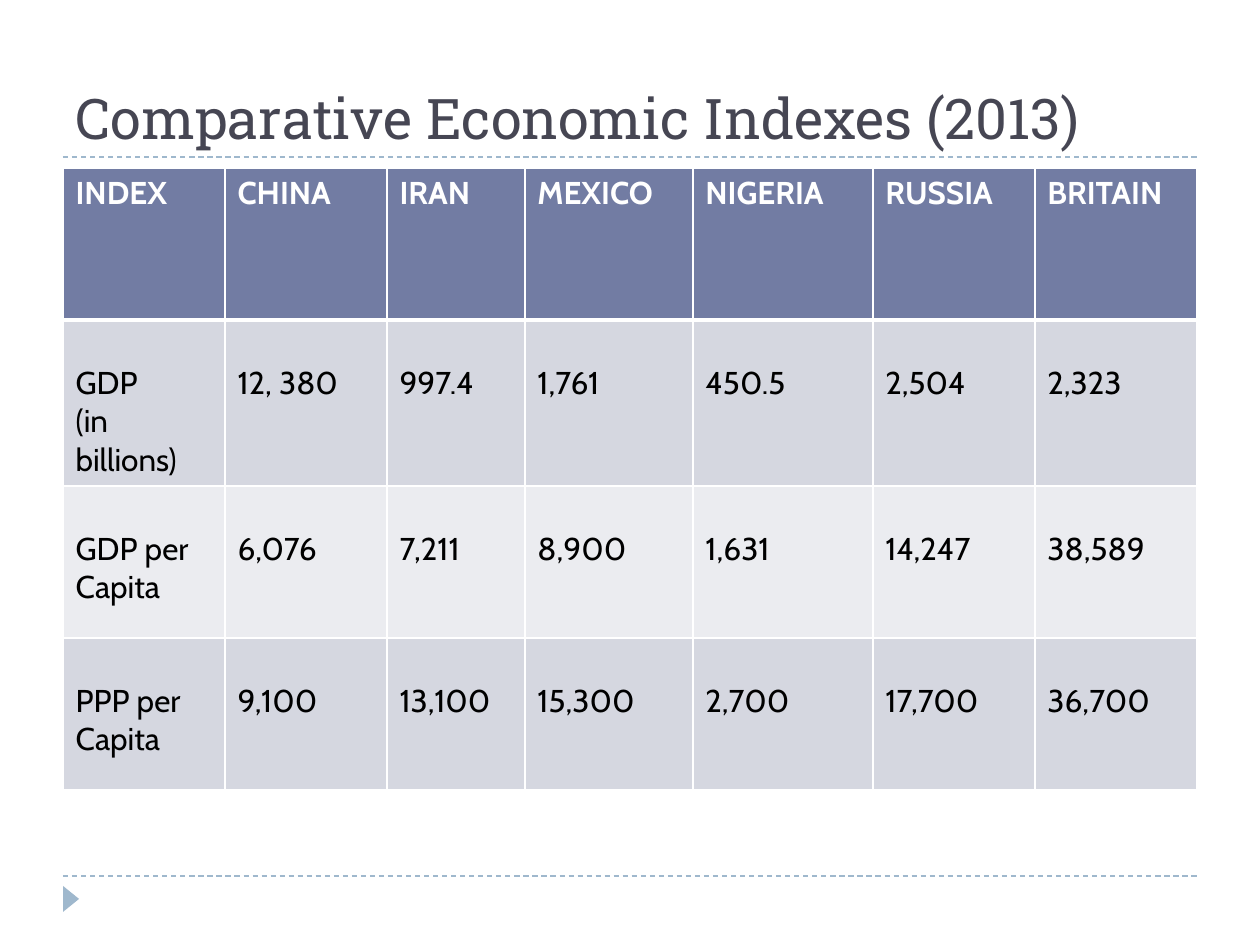
"""Build a slide comparing economic indexes of six countries in 2013."""
from lxml import etree
from pptx import Presentation
from pptx.dml.color import RGBColor
from pptx.enum.dml import MSO_LINE
from pptx.enum.shapes import MSO_CONNECTOR, MSO_SHAPE
from pptx.enum.text import MSO_ANCHOR
from pptx.oxml.ns import qn
from pptx.util import Pt

PX = 914400 // 126
DASH = MSO_LINE.DASH
STRAIGHT = MSO_CONNECTOR.STRAIGHT
TRIANGLE = MSO_SHAPE.ISOSCELES_TRIANGLE
BOTTOM = MSO_ANCHOR.BOTTOM
THEME = {
    "title": {"font": "Roboto Slab", "size": 32, "color": "464653", "bold": False},
    "header": {"font": "Cabin", "size": 18, "color": "FFFFFF", "bold": True},
    "body": {"font": "Cabin", "size": 18, "color": "000000", "bold": False},
    "accent": "9FB8CD",
    "border": "FFFFFF",
    "header_fill": "727CA3",
    "band_fills": ["D5D7E0", "EBECF0"],
}
INDEX_ROWS = [
    ["INDEX", "CHINA", "IRAN", "MEXICO", "NIGERIA", "RUSSIA", "BRITAIN"],
    ["GDP\n(in billions)", "12, 380", "997.4", "1,761", "450.5", "2,504", "2,323"],
    ["GDP per Capita", "6,076", "7,211", "8,900", "1,631", "14,247", "38,589"],
    ["PPP per Capita", "9,100", "13,100", "15,300", "2,700", "17,700", "36,700"],
]
COLUMN_WIDTHS = [162, 162, 138, 168, 180, 162, 162]
ROW_HEIGHTS = [152, 166, 152, 152]
LEFT, WIDTH = 63, 1134


def write_text(frame, text, style):
    for number, line in enumerate(text.split("\n")):
        paragraph = frame.add_paragraph() if number else frame.paragraphs[0]
        run = paragraph.add_run()
        run.text = line
        run.font.name = style["font"]
        run.font.size = Pt(style["size"])
        run.font.bold = style["bold"]
        run.font.color.rgb = RGBColor.from_string(style["color"])


def add_border(cell, side, points):
    border = etree.SubElement(cell._tc.get_or_add_tcPr(), qn(f"a:ln{side}"), w=str(Pt(points)))
    fill = etree.SubElement(border, qn("a:solidFill"))
    etree.SubElement(fill, qn("a:srgbClr"), val=THEME["border"])


prs = Presentation()
prs.slide_width, prs.slide_height = 1260 * PX, 945 * PX
slide = prs.slides.add_slide(prs.slide_layouts[6])
accent = RGBColor.from_string(THEME["accent"])

for rule_y in (876, 157):
    rule = slide.shapes.add_connector(
        STRAIGHT, LEFT * PX, rule_y * PX, (LEFT + WIDTH) * PX, rule_y * PX)
    rule.line.color.rgb = accent
    rule.line.width = Pt(0.75)
    rule.line.dash_style = DASH
    etree.SubElement(rule._element.spPr, qn("a:effectLst"))

footer_marker = slide.shapes.add_shape(TRIANGLE, 58 * PX, 891 * PX, 26 * PX, 16 * PX)
footer_marker.rotation = 90
footer_marker.shadow.inherit = False
footer_marker.fill.solid()
footer_marker.fill.fore_color.rgb = accent
footer_marker.line.fill.background()

title = slide.shapes.add_textbox(LEFT * PX, 21 * PX, WIDTH * PX, 136 * PX).text_frame
title.word_wrap = True
title.vertical_anchor = BOTTOM
write_text(title, "Comparative Economic Indexes (2013)", THEME["title"])

indexes = slide.shapes.add_table(
    len(INDEX_ROWS), len(COLUMN_WIDTHS), LEFT * PX, 168 * PX,
    WIDTH * PX, sum(ROW_HEIGHTS) * PX).table
for column, width in zip(indexes.columns, COLUMN_WIDTHS):
    column.width = width * PX
for row, height in zip(indexes.rows, ROW_HEIGHTS):
    row.height = height * PX

for row_number, values in enumerate(INDEX_ROWS):
    is_header = row_number == 0
    style = THEME["header" if is_header else "body"]
    fill_color = THEME["header_fill"] if is_header else THEME["band_fills"][(row_number - 1) % 2]
    for column_number, value in enumerate(values):
        cell = indexes.cell(row_number, column_number)
        cell.margin_top = (6 if is_header else 44) * PX
        write_text(cell.text_frame, value, style)
        add_border(cell, "L", 1)
        add_border(cell, "R", 1)
        add_border(cell, "T", 3 if row_number == 1 else 1)
        add_border(cell, "B", 3 if is_header else 1)
        cell.fill.solid()
        cell.fill.fore_color.rgb = RGBColor.from_string(fill_color)

prs.save("out.pptx")
